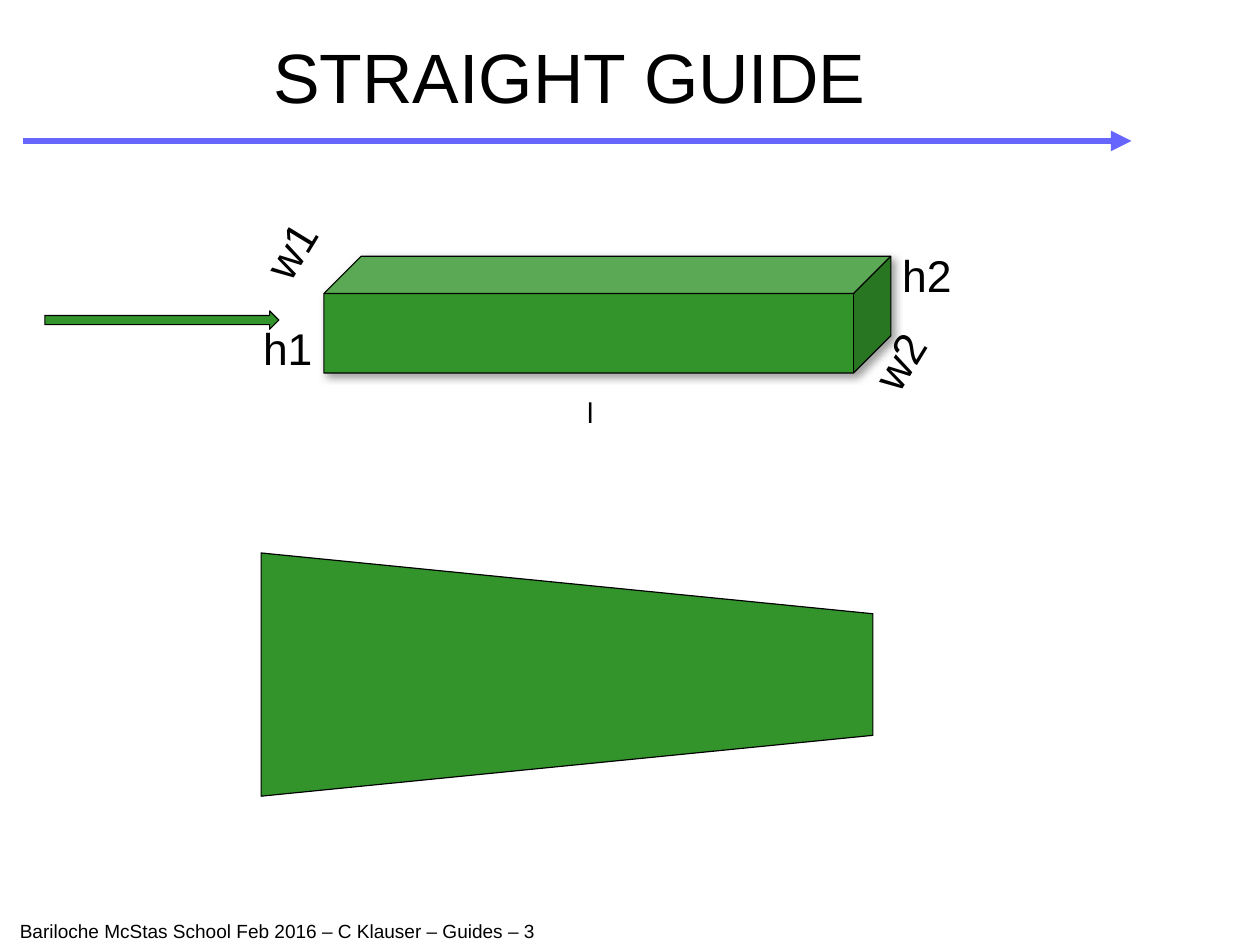
from lxml import etree
from pptx import Presentation
from pptx.dml.color import RGBColor
from pptx.enum.shapes import MSO_CONNECTOR, MSO_SHAPE
from pptx.enum.text import MSO_ANCHOR, PP_ALIGN
from pptx.oxml.ns import qn
from pptx.util import Pt

STRAIGHT = MSO_CONNECTOR.STRAIGHT
CUBE, ARROW, TRAPEZOID = MSO_SHAPE.CUBE, MSO_SHAPE.RIGHT_ARROW, MSO_SHAPE.TRAPEZOID
LEFT, CENTER = PP_ALIGN.LEFT, PP_ALIGN.CENTER
TOP, MIDDLE = MSO_ANCHOR.TOP, MSO_ANCHOR.MIDDLE

BLACK, GREEN, BLUE, GRAY = "000000", "32942A", "6666FF", "808080"
LABEL_TILT = 301.3


def color(hex_value):
    return RGBColor.from_string(hex_value)


class GuideSlide:
    font = "Arial"
    line_spacing = 0.93

    def __init__(self, slide):
        self.slide = slide

    def text(self, words, left, top, width, height, size, align=LEFT, anchor=TOP,
             margins=(7.2, 3.6), wrap=False, rotation=0, spacing=line_spacing):
        box = self.slide.shapes.add_textbox(Pt(left), Pt(top), Pt(width), Pt(height))
        box.rotation = rotation
        frame = box.text_frame
        frame.word_wrap = wrap
        frame.vertical_anchor = anchor
        frame.margin_left = frame.margin_right = Pt(margins[0])
        frame.margin_top = frame.margin_bottom = Pt(margins[1])
        frame.text = words
        paragraph = frame.paragraphs[0]
        paragraph.alignment = align
        paragraph.line_spacing = spacing
        font = paragraph.runs[0].font
        font.name = self.font
        font.size = Pt(size)
        font.color.rgb = color(BLACK)

    def solid(self, kind, left, top, width, height, rotation=0):
        """Add a green preset shape with a thin black outline."""
        shape = self.slide.shapes.add_shape(kind, Pt(left), Pt(top), Pt(width), Pt(height))
        shape.rotation = rotation
        shape.shadow.inherit = False
        shape.fill.solid()
        shape.fill.fore_color.rgb = color(GREEN)
        shape.line.color.rgb = color(BLACK)
        shape.line.width = Pt(0.75)
        return shape

    def drop_shadow(self, shape):
        effects = shape.element.spPr.find(qn("a:effectLst"))
        shadow = etree.SubElement(effects, qn("a:outerShdw"), blurRad=str(Pt(5)),
                                  dist=str(Pt(3)), dir=str(45 * 60000),
                                  algn="tl", rotWithShape="0")
        tint = etree.SubElement(shadow, qn("a:srgbClr"), val=GRAY)
        etree.SubElement(tint, qn("a:alpha"), val="75000")

    def arrow_line(self, left, right, y, width):
        connector = self.slide.shapes.add_connector(STRAIGHT, Pt(left), Pt(y), Pt(right), Pt(y))
        connector.line.color.rgb = color(BLUE)
        connector.line.width = Pt(width)
        outline = connector.element.spPr.find(qn("a:ln"))
        etree.SubElement(outline, qn("a:tailEnd"), type="triangle")
        etree.SubElement(connector.element.spPr, qn("a:effectLst"))


def main():
    presentation = Presentation()
    presentation.slide_width = Pt(793.75)
    presentation.slide_height = Pt(595.25)
    guide = GuideSlide(presentation.slides.add_slide(presentation.slide_layouts[6]))

    guide.text("Bariloche McStas School Feb 2016 – C Klauser – Guides – 3",
               5.4, 575.6, 576, 19.5, 12, wrap=True, spacing=1.0)
    guide.arrow_line(14.4, 712.8, 88.8, 4.31)
    guide.text("STRAIGHT GUIDE", 2, 19.5, 714, 62.5, 44, align=CENTER, anchor=MIDDLE,
               margins=(0, 0), wrap=True)

    cube = guide.solid(CUBE, 204, 161.4, 357.2, 73.6)
    cube.adjustments[0] = 0.32
    guide.drop_shadow(cube)
    guide.solid(ARROW, 28.3, 195.8, 147.4, 11.6)

    for words, left, top, width, rotation in (
            ("h2", 561.2, 155.5, 46, 0),
            ("h1", 158.6, 201.6, 46, 0),
            ("w2", 542.6, 208.1, 52, LABEL_TILT),
            ("w1", 159.1, 138.2, 52, LABEL_TILT)):
        guide.text(words, left, top, width, 39, 28, rotation=rotation)
    guide.text("l", 362.8, 247, 18.6, 28, 18)

    guide.solid(TRAPEZOID, 280.6, 232.2, 153.2, 385.4, rotation=90)
    presentation.save("out.pptx")


if __name__ == "__main__":
    main()
